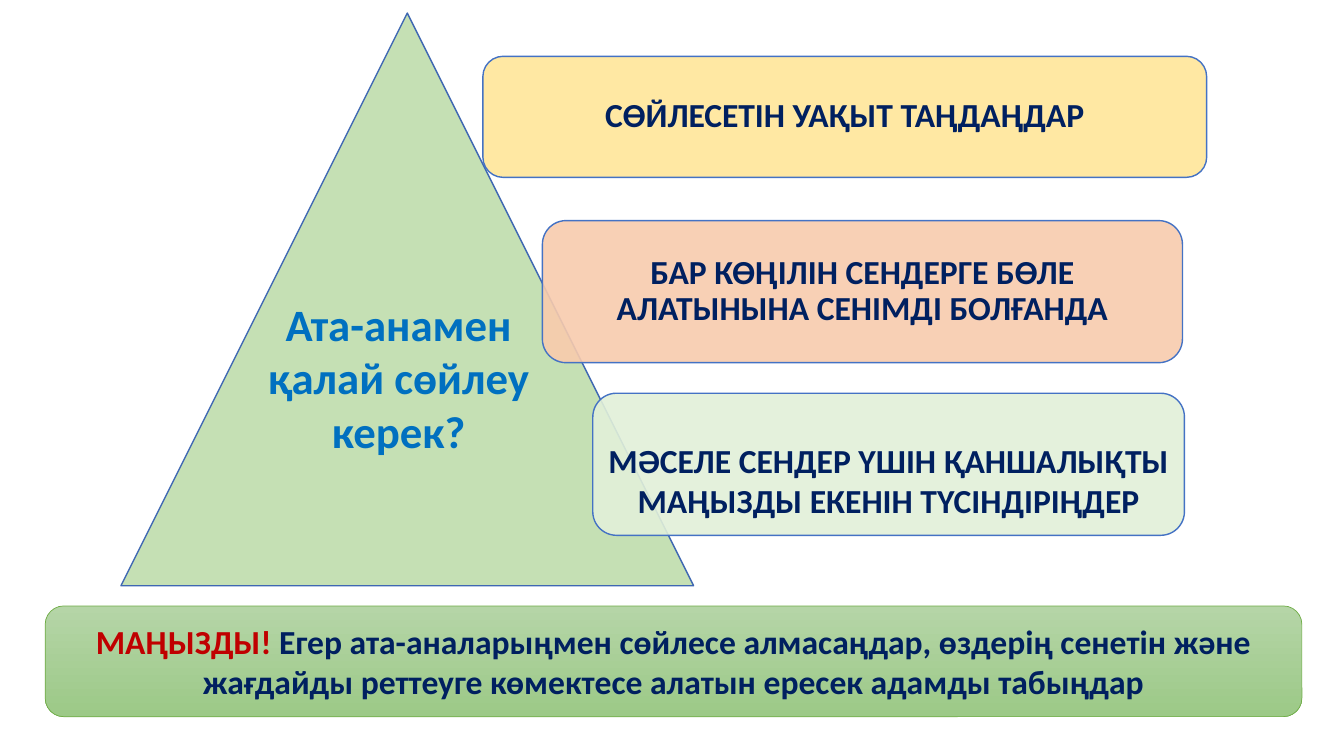
"""Build a slide on how to talk with parents: triangle, three tips and a note."""
from lxml.etree import SubElement
from pptx import Presentation
from pptx.dml.color import RGBColor
from pptx.enum.shapes import MSO_SHAPE
from pptx.enum.text import MSO_ANCHOR, PP_ALIGN
from pptx.oxml.ns import qn
from pptx.util import Cm, Pt

FONT, NAVY, BLUE, RED = "Calibri", "002060", "0070C0", "C00000"
EDGE = "4472C4"

PEAK = (3.05, 0.33, 14.43, 14.43)
TITLE = (6.43, 7.34, 7.24, 4.37)
NOTE = (1.14, 15.27, 31.67, 2.79)
ASK = [("Ата-анамен қалай сөйлеу керек?", BLUE)]
WARN = [
    ("МАҢЫЗДЫ! ", RED),
    ("Егер ата-аналарыңмен сөйлесе алмасаңдар, өздерің сенетін және "
     "жағдайды реттеуге көмектесе алатын ересек адамды табыңдар", NAVY),
]
# box, fill, text, side inset, top inset, line spacing
TIPS = [
    ((12.17, 1.42, 18.24, 3.05), "FFE699",
     "СӨЙЛЕСЕТІН УАҚЫТ ТАҢДАҢДАР", 0.25, 0.25, 0.9),
    ((13.67, 5.56, 16.13, 3.58), "F8CBAD",
     "БАР КӨҢІЛІН СЕНДЕРГЕ БӨЛЕ АЛАТЫНЫНА СЕНІМДІ БОЛҒАНДА", 0.25, 0.25, 0.9),
    ((14.94, 9.91, 14.91, 3.58), "E2F0D9",
     "МӘСЕЛЕ СЕНДЕР ҮШІН ҚАНШАЛЫҚТЫ МАҢЫЗДЫ ЕКЕНІН ТҮСІНДІРІҢДЕР",
     0.17, 0.95, 1.0),
]


def tint(color, code):
    color.rgb = RGBColor.from_string(code)


def draw(kind, box, edge, width, fill=None):
    shape = slide.shapes.add_shape(kind, *map(Cm, box))
    shape.shadow.inherit = False
    tint(shape.line.color, edge)
    shape.line.width = Pt(width)
    if fill:
        shape.fill.solid()
        tint(shape.fill.fore_color, fill)
    return shape


def fade(shape, share):
    color = shape.fill._xPr.find(qn("a:solidFill"))[0]
    SubElement(color, qn("a:alpha")).set("val", str(share * 1000))


def write(shape, runs, size, anchor=MSO_ANCHOR.MIDDLE, space=1.0):
    frame = shape.text_frame
    frame.word_wrap = True
    frame.vertical_anchor = anchor
    para = frame.paragraphs[0]
    para.alignment = PP_ALIGN.CENTER
    para.line_spacing = space
    for text, code in runs:
        run = para.add_run()
        run.text = text
        run.font.name, run.font.size, run.font.bold = FONT, Pt(size), True
        tint(run.font.color, code)
    return frame


deck = Presentation()
deck.slide_width, deck.slide_height = Cm(33.87), Cm(19.05)
slide = deck.slides.add_slide(deck.slide_layouts[6])

draw(MSO_SHAPE.ISOSCELES_TRIANGLE, PEAK, "3E67B2", 1, "C5E0B4")

for box, fill, text, side, top, space in TIPS:
    tip = draw(MSO_SHAPE.ROUNDED_RECTANGLE, box, EDGE, 1, fill)
    fade(tip, 90)
    frame = write(tip, [(text, NAVY)], 24, space=space)
    frame.margin_left = frame.margin_right = frame.margin_bottom = Cm(side)
    frame.margin_top = Cm(top)

write(slide.shapes.add_textbox(*map(Cm, TITLE)), ASK, 32, MSO_ANCHOR.TOP)

note = draw(MSO_SHAPE.ROUNDED_RECTANGLE, NOTE, "70AD47", 0.5)
note.fill.gradient()
note.fill.gradient_angle = 270
for stop, code in zip(note.fill.gradient_stops, ("B5D5A7", "9CC987")):
    tint(stop.color, code)
write(note, WARN, 24)

deck.save("out.pptx")
